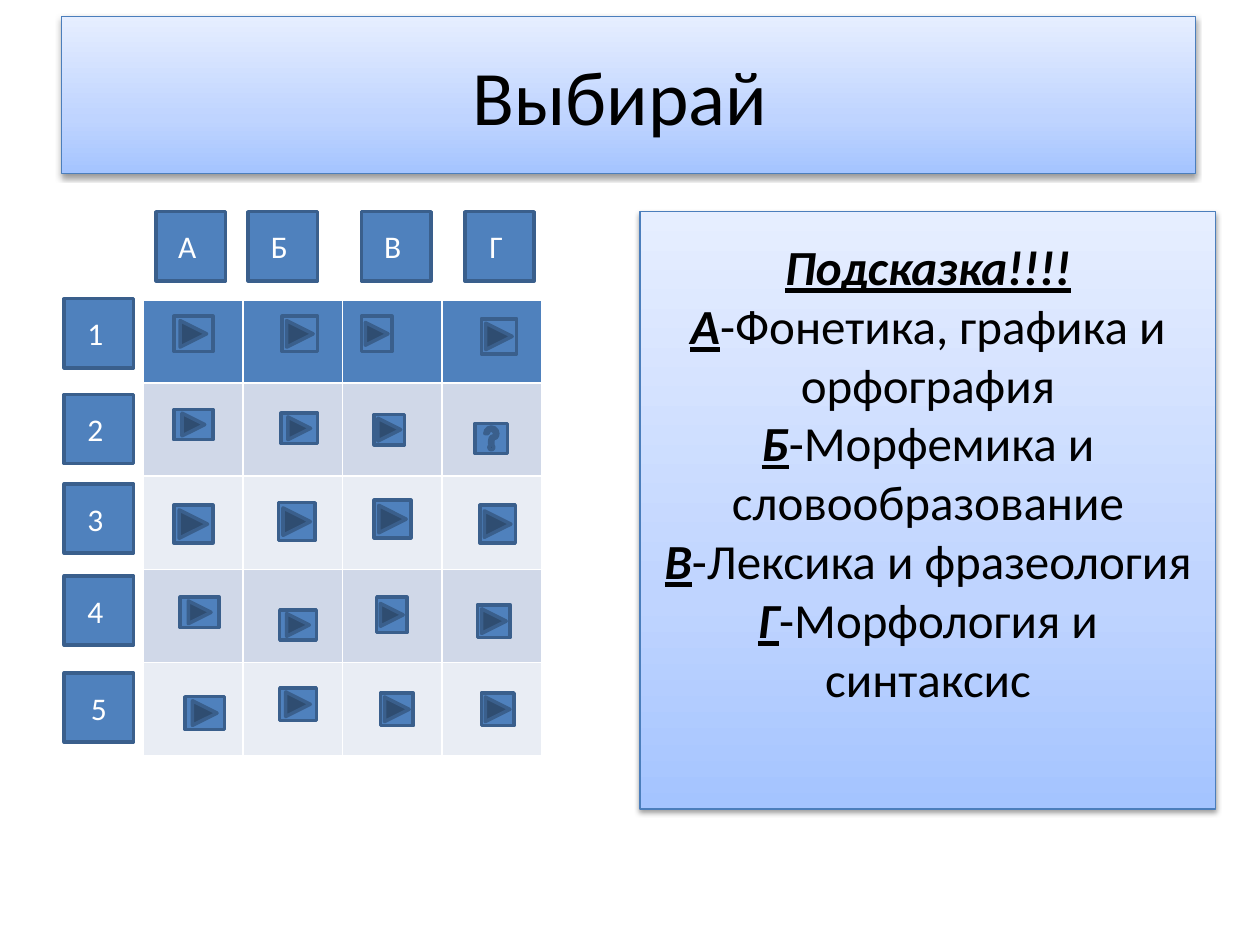
from copy import deepcopy
from dataclasses import dataclass

from lxml.etree import SubElement
from pptx import Presentation
from pptx.dml.color import RGBColor
from pptx.enum.shapes import MSO_SHAPE
from pptx.enum.text import MSO_ANCHOR, PP_ALIGN
from pptx.oxml.ns import qn
from pptx.util import Inches, Pt


@dataclass(frozen=True)
class Theme:
    font: str = "Calibri"
    title_size: int = 44
    hint_size: int = 28
    label_size: int = 18
    accent: str = "4F81BD"
    outline: str = "3A5F8C"
    panel_line: str = "4B7EBC"
    panel_stops: tuple = ((0, "A4C4FF"), (0.35, "BFD4FF"), (1, "E6EEFF"))
    bands: tuple = ("E9EDF4", "D0D8E8")
    light: str = "FFFFFF"
    dark: str = "000000"


def rgb(value):
    return RGBColor.from_string(value)


class Board:
    def __init__(self, slide, theme):
        self.slide = slide
        self.theme = theme

    def shape(self, kind, at, line, width):
        shape = self.slide.shapes.add_shape(kind, *map(Inches, at))
        shape.shadow.inherit = False
        shape.line.color.rgb = rgb(line)
        shape.line.width = Pt(width)
        return shape

    def text(self, shape, paragraphs, size, color):
        """Each paragraph is a list of (text, is_emphasised) runs."""
        frame = shape.text_frame
        frame.word_wrap = True
        frame.vertical_anchor = MSO_ANCHOR.MIDDLE
        for index, runs in enumerate(paragraphs):
            para = frame.add_paragraph() if index else frame.paragraphs[0]
            para.alignment = PP_ALIGN.CENTER
            for content, emphasised in runs:
                span = para.add_run()
                span.text = content
                font = span.font
                font.name = self.theme.font
                font.size = Pt(size)
                font.color.rgb = rgb(color)
                font.bold = font.italic = font.underline = emphasised

    def button(self, kind, at):
        box = self.shape(kind, at, self.theme.outline, 2)
        box.fill.solid()
        box.fill.fore_color.rgb = rgb(self.theme.accent)
        return box

    def label(self, content, left, top, side=0.55):
        box = self.button(MSO_SHAPE.RECTANGLE, (left, top, side, side))
        self.text(box, [[(content, False)]], self.theme.label_size, self.theme.light)

    def panel(self, kind, at, paragraphs, size):
        box = self.shape(kind, at, self.theme.panel_line, 0.75)
        self.panel_gradient(box)
        self.panel_shadow(box)
        self.text(box, paragraphs, size, self.theme.dark)
        return box

    def panel_gradient(self, box):
        box.fill.gradient()
        box.fill.gradient_angle = 90
        stop_list = box.element.spPr.find(qn("a:gradFill")).find(qn("a:gsLst"))
        stop_list.append(deepcopy(stop_list[-1]))
        for stop, (position, color) in zip(box.fill.gradient_stops, self.theme.panel_stops):
            stop.position = position
            stop.color.rgb = rgb(color)

    def panel_shadow(self, box):
        effects = box.element.spPr.find(qn("a:effectLst"))
        shadow = SubElement(effects, qn("a:outerShdw"), blurRad=str(Pt(3.1)),
                            dist=str(Pt(1.6)), dir="5400000", rotWithShape="0")
        color = SubElement(shadow, qn("a:srgbClr"), val=self.theme.dark)
        SubElement(color, qn("a:alpha"), val="38000")

    def grid(self, left, top, column_width, row_heights, columns):
        """Empty banded table; the default style supplies its white rules."""
        frame = self.slide.shapes.add_table(
            len(row_heights), columns, Inches(left), Inches(top),
            Inches(column_width * columns), Inches(sum(row_heights)))
        table = frame.table
        for column in table.columns:
            column.width = Inches(column_width)
        for index, (row, height) in enumerate(zip(table.rows, row_heights)):
            row.height = Inches(height)
            color = self.theme.bands[index % 2] if index else self.theme.accent
            for cell in row.cells:
                cell.fill.solid()
                cell.fill.fore_color.rgb = rgb(color)


COLUMN_LABELS = (("А ", 1.24), ("Б ", 1.97), ("В ", 2.87), ("Г ", 3.69))
ROW_LABELS = (("1 ", 2.37), ("2 ", 3.13), ("3 ", 3.84), ("4 ", 4.57), ("5", 5.34))

# One line per topic column: left, top, width, height of each question button.
QUESTION_BUTTONS = (
    ((1.38, 2.51, 0.31, 0.28), (1.38, 3.25, 0.31, 0.24), (1.38, 4.01, 0.31, 0.3),
     (1.43, 4.74, 0.31, 0.24), (1.47, 5.53, 0.31, 0.26)),
    ((2.24, 2.51, 0.28, 0.28), (2.23, 3.28, 0.29, 0.24), (2.21, 3.99, 0.29, 0.3),
     (2.22, 4.84, 0.29, 0.24), (2.22, 5.46, 0.29, 0.26)),
    ((2.87, 2.51, 0.24, 0.28), (2.97, 3.29, 0.24, 0.24), (2.97, 3.97, 0.29, 0.3),
     (2.99, 4.74, 0.24, 0.28), (3.02, 5.5, 0.26, 0.26)),
    ((3.82, 2.53, 0.28, 0.28), (3.77, 3.36, 0.26, 0.24), (3.81, 4.01, 0.28, 0.3),
     (3.79, 4.8, 0.26, 0.26), (3.82, 5.5, 0.26, 0.26)),
)
HELP_CELL = (3, 1)

TOPICS = (
    ("А", "-Фонетика, графика и орфография"),
    ("Б", "-Морфемика и словообразование"),
    ("В", "-Лексика и фразеология"),
    ("Г", "-Морфология и синтаксис"),
)


def main():
    deck = Presentation()
    deck.slide_width, deck.slide_height = Inches(10), Inches(7.5)
    theme = Theme()
    board = Board(deck.slides.add_slide(deck.slide_layouts[6]), theme)

    board.grid(1.14, 2.38, 0.79, [0.66] + [0.74] * 4, 4)
    for content, left in COLUMN_LABELS:
        board.label(content, left, 1.68)
    for content, top in ROW_LABELS:
        board.label(content, 0.51, top)

    board.panel(MSO_SHAPE.RECTANGLE, (0.49, 0.13, 9, 1.25),
                [[("Выбирай ", False)]], theme.title_size)

    for column, buttons in enumerate(QUESTION_BUTTONS):
        for row, at in enumerate(buttons):
            is_help = (column, row) == HELP_CELL
            board.button(MSO_SHAPE.ACTION_BUTTON_HELP if is_help
                         else MSO_SHAPE.ACTION_BUTTON_FORWARD_OR_NEXT, at)

    hint = [[("Подсказка!!!!", True)]]
    hint += [[(letter, True), (topic, False)] for letter, topic in TOPICS]
    hint_panel = board.panel(MSO_SHAPE.FLOWCHART_PROCESS, (5.08, 1.68, 4.57, 4.74),
                             hint, theme.hint_size)
    hint_panel.text_frame.margin_bottom = Inches(0.66)

    deck.save("out.pptx")


if __name__ == "__main__":
    main()
